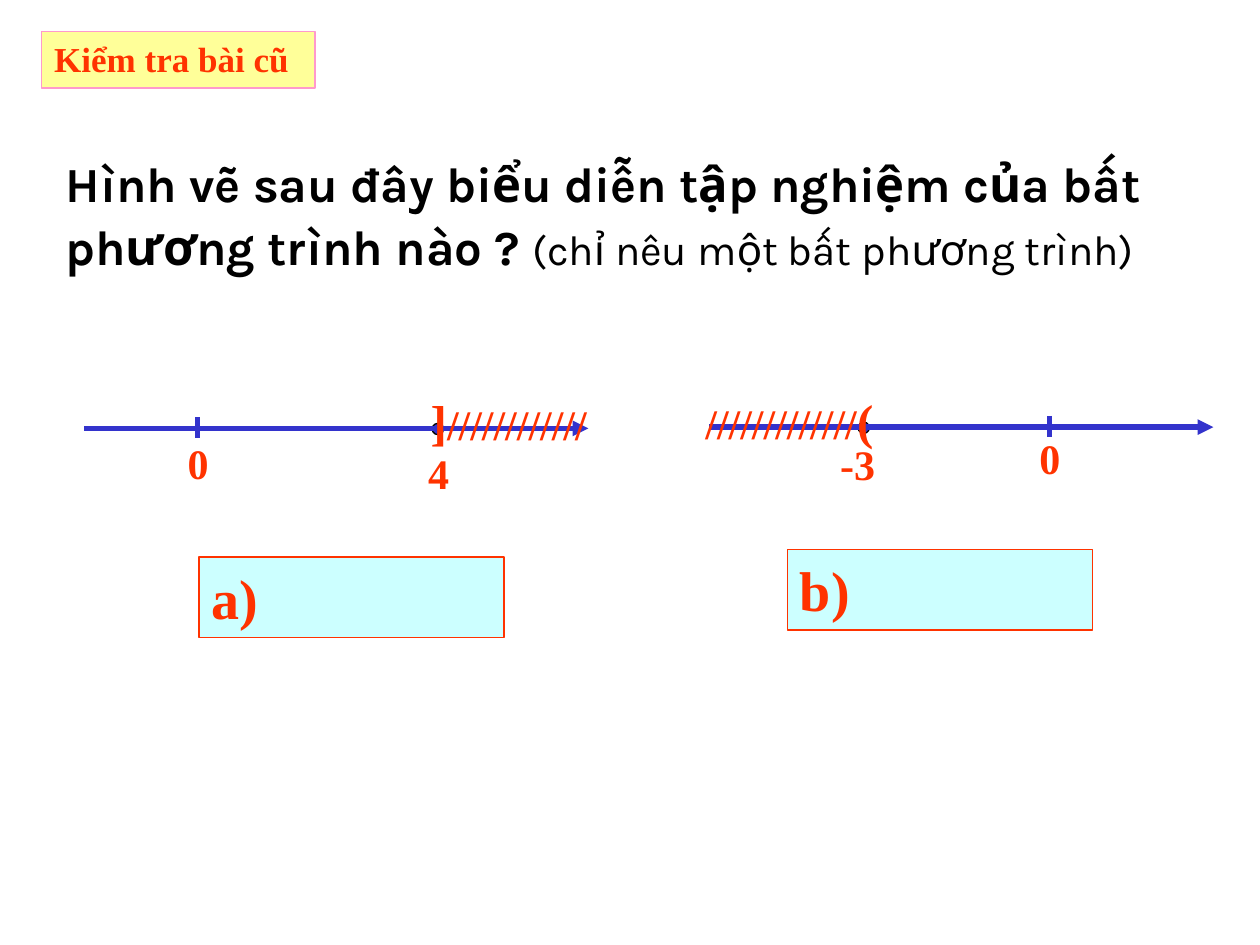
from lxml.etree import SubElement
from pptx import Presentation
from pptx.dml.color import RGBColor
from pptx.enum.shapes import MSO_CONNECTOR, MSO_SHAPE
from pptx.enum.text import MSO_ANCHOR, MSO_AUTO_SIZE, PP_ALIGN
from pptx.oxml.ns import qn
from pptx.util import Inches, Pt

RED = RGBColor(0xFF, 0x33, 0x00)
BLUE = RGBColor(0x33, 0x33, 0xCC)
BLACK = RGBColor(0, 0, 0)
YELLOW = RGBColor(0xFF, 0xFF, 0x99)
PINK = RGBColor(0xFF, 0x99, 0xCC)
CYAN = RGBColor(0xCC, 0xFF, 0xFF)
SERIF, SANS = "Times New Roman", "Karla"

TITLE = "Kiểm tra bài cũ"
ASK = [
    [("Hình vẽ sau đây biểu diễn tập nghiệm của bất", 28, True)],
    [("phương trình nào ? ", 28, True),
     ("(chỉ nêu một bất phương trình)", 24, False)],
]
GRAPHS = [
    dict(start=0.67, y=3.4, zero=1.57, dot=(3.43, 3.36),
         labels=[("0", 1.39, 3.42, 0.37), ("4", 3.3, 3.5, 0.37)],
         hatch=[("]", 28, True), ("/" * 12, 24, True)],
         span=(3.32, 3.06, 1.69, 0.57),
         name="a)", box=(1.58, 4.42)),
    dict(start=5.63, y=3.39, zero=8.33, dot=(6.81, 3.35),
         labels=[("0", 8.15, 3.38, 0.37), ("-3", 6.57, 3.43, 0.48)],
         hatch=[("/" * 13, 24, True), ("(", 28, True)],
         span=(5.5, 3.05, 1.75, 0.57),
         name="b)", box=(6.25, 4.36)),
]


def place(shape, box):
    shape.left, shape.top, shape.width, shape.height = map(Inches, box)


def paint(shape, fill, edge, width):
    shape.fill.solid()
    shape.fill.fore_color.rgb = fill
    shape.line.color.rgb = edge
    shape.line.width = Pt(width)


def write(shape, rows, font=SERIF, color=RED, wrap=True):
    frame = shape.text_frame
    frame.word_wrap = wrap
    frame.auto_size = MSO_AUTO_SIZE.NONE
    frame.vertical_anchor = MSO_ANCHOR.TOP
    frame.margin_left = frame.margin_right = Inches(0.1)
    frame.margin_top = frame.margin_bottom = Inches(0.05)
    for i, row in enumerate(rows):
        para = frame.add_paragraph() if i else frame.paragraphs[0]
        para.alignment = PP_ALIGN.LEFT
        para.line_spacing = 1.0
        para.space_before = Pt(0)
        for text, size, bold in row:
            run = para.add_run()
            run.text = text
            run.font.name = font
            run.font.size = Pt(size)
            run.font.bold = bold
            run.font.color.rgb = color


def label(slide, box, row, wrap=True):
    shape = slide.shapes.add_textbox(*map(Inches, box))
    write(shape, [row], wrap=wrap)


def stroke(slide, x1, y1, x2, y2, arrow=False):
    line = slide.shapes.add_connector(
        MSO_CONNECTOR.STRAIGHT, *map(Inches, (x1, y1, x2, y2)))
    line.line.color.rgb = BLUE
    line.line.width = Pt(3)
    if arrow:
        SubElement(line.line._get_or_add_ln(), qn("a:tailEnd"), type="triangle")
    SubElement(line._element.spPr, qn("a:effectLst"))


def preset(slide, kind, box, fill, edge, width):
    shape = slide.shapes.add_shape(kind, *map(Inches, box))
    shape.shadow.inherit = False
    paint(shape, fill, edge, width)
    return shape


def graph(slide, data):
    x, y, zero = data["start"], data["y"], data["zero"]
    preset(slide, MSO_SHAPE.OVAL, (*data["dot"], 0.09, 0.09), BLUE, BLACK, 0)
    stroke(slide, x, y, x + 4, y, arrow=True)
    stroke(slide, zero, y - 0.09, zero, y + 0.08)
    for text, left, top, width in data["labels"]:
        label(slide, (left, top, width, 0.5), [(text, 24, True)], wrap=False)
    label(slide, data["span"], data["hatch"])
    box = preset(slide, MSO_SHAPE.RECTANGLE, (*data["box"], 2.42, 0.64),
                 CYAN, RED, 0.75)
    write(box, [[(data["name"], 32, True)]])


def main():
    deck = Presentation()
    deck.slide_width, deck.slide_height = Inches(10), Inches(7.5)
    slide = deck.slides.add_slide(deck.slide_layouts[1])
    title, body = slide.placeholders

    place(title, (0.33, 0.25, 2.17, 0.45))
    paint(title, YELLOW, PINK, 1)
    write(title, [[(TITLE, 20, True)]])

    place(body, (0.42, 1.22, 9.33, 1.03))
    write(body, ASK, SANS, BLACK)
    for para in body.text_frame.paragraphs:
        para.line_spacing = 0.9
        para.space_before = Pt(5.6)
        props = para._p.get_or_add_pPr()
        props.set("marL", "0")
        props.set("indent", "0")
        SubElement(props, qn("a:buNone"))

    for data in GRAPHS:
        graph(slide, data)
    deck.save("out.pptx")


if __name__ == "__main__":
    main()
